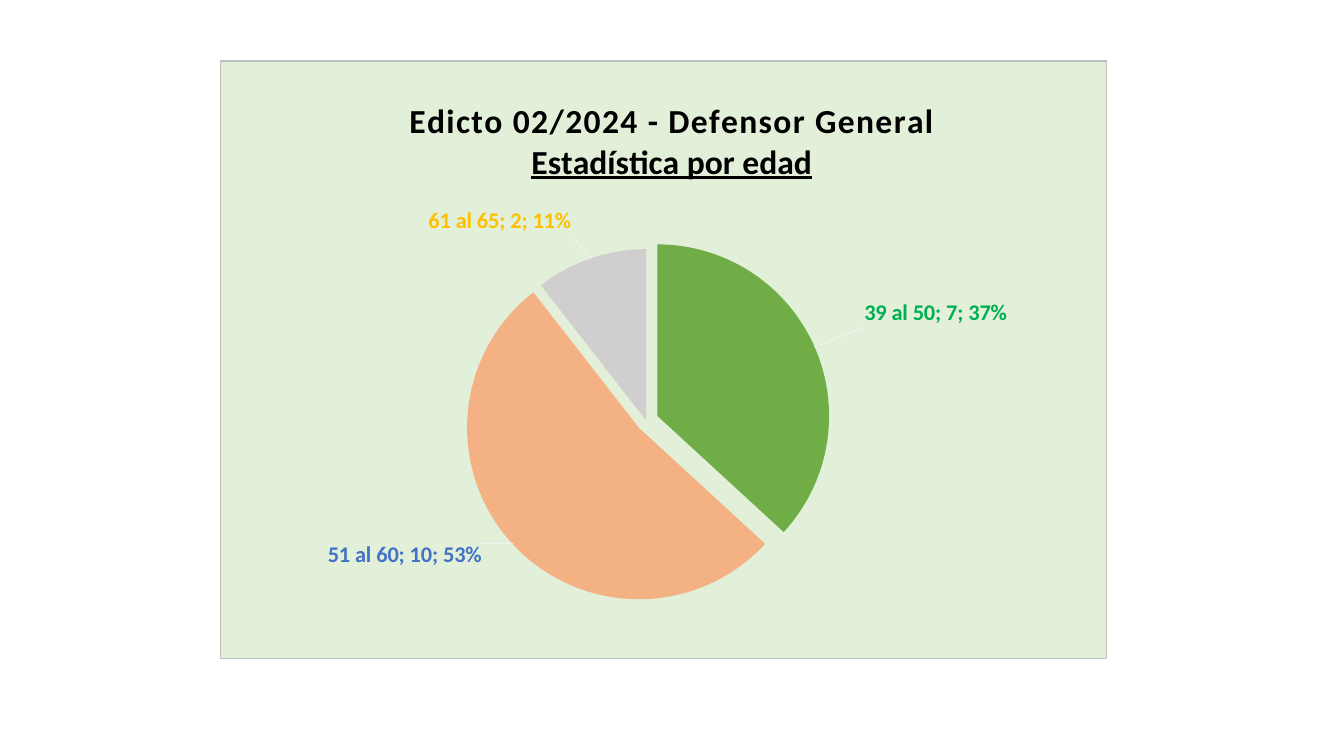
from lxml.etree import SubElement
from pptx import Presentation
from pptx.chart.data import CategoryChartData
from pptx.dml.color import RGBColor
from pptx.enum.chart import XL_CHART_TYPE, XL_LABEL_POSITION
from pptx.oxml import parse_xml
from pptx.oxml.ns import nsdecls, qn
from pptx.util import Inches, Pt

COLORS = {
    "panel": "E2F0D9", "border": "BFBFBF", "text": "000000", "leader": "F2F2F2",
    "green": "70AD47", "orange": "F4B183", "grey": "D0CECE",
    "green_label": "00B050", "blue_label": "4472C4", "gold_label": "FFC000",
}
AGES = [
    ("39 al 50", 7, "green", 7, "green_label", (0.05, -0.03)),
    ("51 al 60", 10, "orange", 6, "blue_label", (-0.03, -0.01)),
    ("61 al 65", 2, "grey", 0, "gold_label", (-0.02, -0.03)),
]


class PieSlide:
    """Draws a styled pie chart on one slide, with lengths in hundredths of its size."""

    font_name = "Calibri"

    def __init__(self, presentation):
        self.column = presentation.slide_width / 100
        self.row = presentation.slide_height / 100
        self.slide = presentation.slides.add_slide(presentation.slide_layouts[6])

    def style(self, font, size, color, bold=True):
        font.name, font.size, font.bold = self.font_name, Pt(size), bold
        font.color.rgb = RGBColor.from_string(COLORS[color])

    def outline(self, color, width):
        return (f'<a:ln w="{Pt(width)}"><a:solidFill><a:srgbClr val="{COLORS[color]}"/>'
                "</a:solidFill></a:ln>")

    def layout(self, **values):
        parts = "".join(f'<c:{name} val="{value}"/>' for name, value in values.items())
        return parse_xml(f'<c:layout {nsdecls("c")}><c:manualLayout>{parts}'
                         "</c:manualLayout></c:layout>")

    def place(self, parent, layout, after=None):
        for existing in parent.findall(qn("c:layout")):
            parent.remove(existing)
        if after is None:
            parent.insert(0, layout)
        else:
            parent.find(qn(after)).addnext(layout)

    def chart(self, left, top, width, height, ages):
        data = CategoryChartData()
        data.categories = [age[0] for age in ages]
        data.add_series("Series 1", [age[1] for age in ages])
        chart = self.slide.shapes.add_chart(
            XL_CHART_TYPE.PIE, int(left * self.column), int(top * self.row),
            int(width * self.column), int(height * self.row), data).chart
        chart.has_legend = False
        self.style(chart.font, 10, "text", bold=False)
        space = chart.element if hasattr(chart, "element") else chart._chartSpace
        space.find(qn("c:chart")).addnext(parse_xml(
            f'<c:spPr {nsdecls("c", "a")}><a:solidFill><a:srgbClr val="{COLORS["panel"]}"/>'
            f'</a:solidFill>{self.outline("border", 0.75)}</c:spPr>'))
        self.place(space.find(".//" + qn("c:plotArea")), self.layout(
            layoutTarget="inner", xMode="edge", yMode="edge",
            x=0.078, y=0.315, w=0.806, h=0.574))
        return chart

    def title(self, chart, heading, subheading, x, y):
        title = chart.chart_title
        frame = title.text_frame
        frame.text = f"{heading}\n{subheading}"
        for paragraph in frame.paragraphs:
            self.style(paragraph.font, 24, "text")
            for run in paragraph.runs:
                self.style(run.font, 24, "text")
        first, second = [paragraph.runs[0] for paragraph in frame.paragraphs]
        first.font._element.set("spc", "100")
        second.font.underline = True
        self.place(title._element, self.layout(xMode="edge", yMode="edge", x=x, y=y), "c:tx")

    def slices(self, chart, ages):
        plot = chart.plots[0]
        plot.vary_by_categories = True
        series = plot.series[0]
        for index, (_, _, color, explosion, _, _) in enumerate(ages):
            point = series.points[index]
            point.format.fill.solid()
            point.format.fill.fore_color.rgb = RGBColor.from_string(COLORS[color])
            point.format.line.fill.background()
        for age, element in zip(ages, series._element.findall(qn("c:dPt"))):
            element.find(qn("c:spPr")).addprevious(
                parse_xml(f'<c:explosion {nsdecls("c")} val="{age[3]}"/>'))

    def labels(self, chart, ages):
        series = chart.plots[0].series[0]
        labels = series.data_labels
        self.style(labels.font, 16, "text")
        labels.position = XL_LABEL_POSITION.OUTSIDE_END
        for index, age in enumerate(ages):
            label = series.points[index].data_label
            self.style(label.font, 16, age[4])
            label.position = XL_LABEL_POSITION.OUTSIDE_END
        group = series._element.find(qn("c:dLbls"))
        for age, element in zip(ages, group.findall(qn("c:dLbl"))):
            x, y = age[5]
            self.place(element, self.layout(x=x, y=y), "c:idx")
        for element in [group, *group.findall(qn("c:dLbl"))]:
            for name in ("showVal", "showCatName", "showPercent"):
                element.find(qn(f"c:{name}")).set("val", "1")
            separator = parse_xml(f'<c:separator {nsdecls("c")}>; </c:separator>')
            element.find(qn("c:showBubbleSize")).addnext(separator)
        leader = group.find(qn("c:showLeaderLines"))
        if leader is None:
            leader = SubElement(group, qn("c:showLeaderLines"))
        leader.set("val", "1")
        leader.addnext(parse_xml(
            f'<c:leaderLines {nsdecls("c", "a")}><c:spPr>{self.outline("leader", 0.75)}'
            "</c:spPr></c:leaderLines>"))


def main():
    presentation = Presentation()
    presentation.slide_width, presentation.slide_height = Inches(13.33), Inches(7.5)
    slide = PieSlide(presentation)
    chart = slide.chart(16.35, 8, 66, 79.2, AGES)
    slide.title(chart, "Edicto 02/2024 - Defensor General", "Estadística por edad", 0.21, 0.06)
    slide.slices(chart, AGES)
    slide.labels(chart, AGES)
    presentation.save("out.pptx")


if __name__ == "__main__":
    main()
